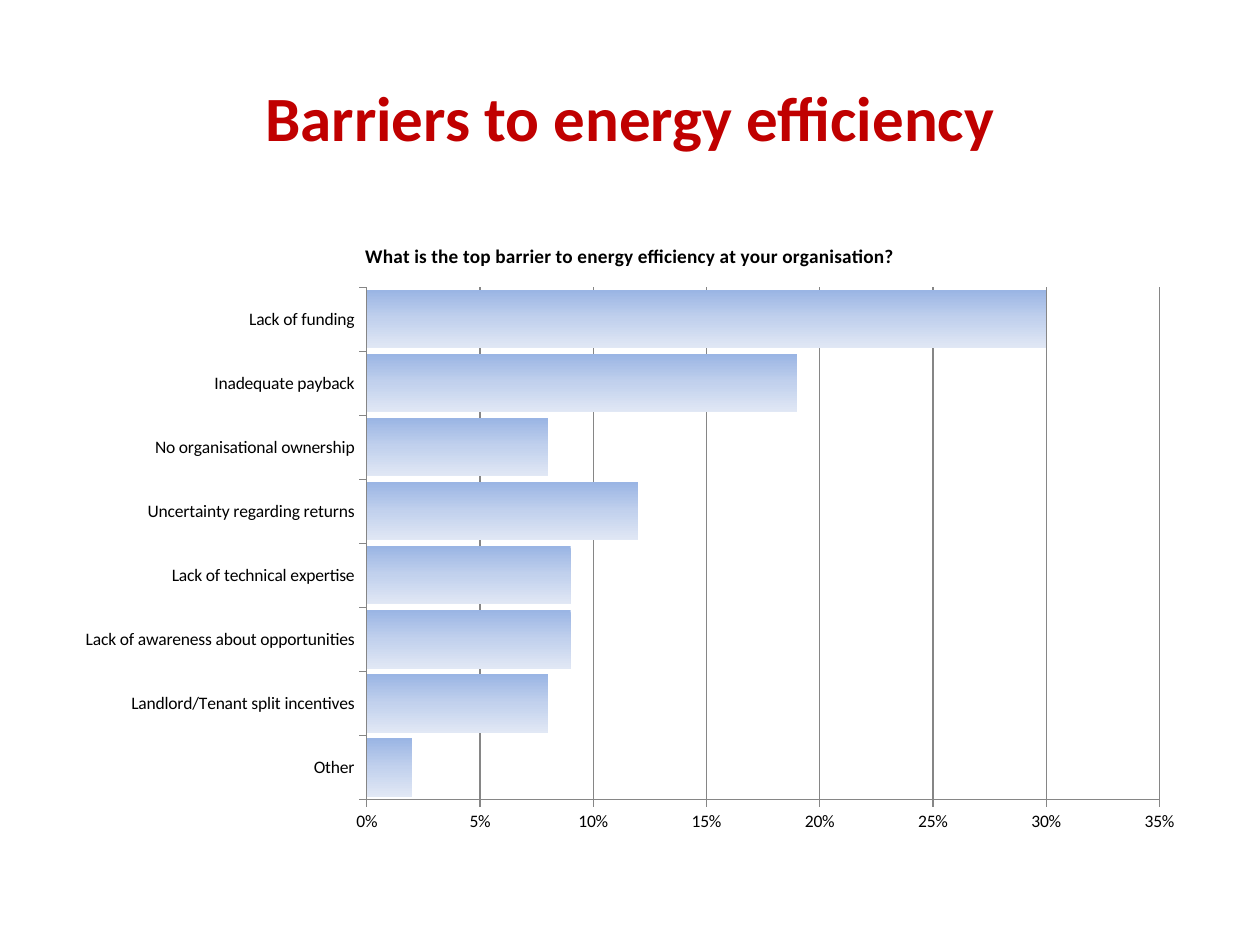
from copy import deepcopy

from pptx import Presentation
from pptx.chart.data import CategoryChartData
from pptx.dml.color import RGBColor
from pptx.enum.chart import XL_CHART_TYPE as ChartType, XL_TICK_MARK as TickMark
from pptx.enum.text import MSO_ANCHOR as Anchor, PP_ALIGN as Align
from pptx.util import Inches, Pt

FONT = "Calibri"
RED = RGBColor(0xC0, 0x00, 0x00)
BLACK = RGBColor(0x00, 0x00, 0x00)
GRAY = RGBColor(0x86, 0x86, 0x86)
BAR_STOPS = [
    (0, RGBColor(0x9A, 0xB5, 0xE4)),
    (0.5, RGBColor(0xC2, 0xD1, 0xED)),
    (1, RGBColor(0xE1, 0xE8, 0xF5)),
]
# Listed from the bottom bar to the top bar
BARRIERS = [
    ("Other", 0.02),
    ("Landlord/Tenant split incentives", 0.08),
    ("Lack of awareness about opportunities", 0.09),
    ("Lack of technical expertise", 0.09),
    ("Uncertainty regarding returns", 0.12),
    ("No organisational ownership", 0.08),
    ("Inadequate payback", 0.19),
    ("Lack of funding", 0.3),
]


def add_run(paragraph, text, size, color):
    run = paragraph.add_run()
    run.text = text
    run.font.name = FONT
    run.font.size = Pt(size)
    run.font.bold = True
    run.font.color.rgb = color


presentation = Presentation()
presentation.slide_width = Inches(10)
presentation.slide_height = Inches(7.5)
slide = presentation.slides.add_slide(presentation.slide_layouts[5])

# Title
title = slide.shapes.title
title.left, title.top = Inches(0.5), Inches(0.3)
title.width, title.height = Inches(9), Inches(1.25)
title.text_frame.vertical_anchor = Anchor.MIDDLE
paragraph = title.text_frame.paragraphs[0]
paragraph.alignment = Align.CENTER
add_run(paragraph, "Barriers to energy efficiency", 36, RED)

# Bar chart
chart_data = CategoryChartData(number_format="0%")
chart_data.categories = [name for name, share in BARRIERS]
chart_data.add_series("Series 1", [share for name, share in BARRIERS])
chart = slide.shapes.add_chart(
    ChartType.BAR_CLUSTERED,
    Inches(0.5), Inches(1.75), Inches(9), Inches(4.95), chart_data,
).chart
chart.font.name = FONT
chart.font.size = Pt(18)
chart.font.color.rgb = BLACK
chart.has_legend = False
chart.has_title = True
add_run(
    chart.chart_title.text_frame.paragraphs[0],
    "What is the top barrier to energy efficiency at your organisation?", 11, BLACK,
)
chart.chart_title.include_in_layout = False

# Axes and gridlines
for axis in (chart.category_axis, chart.value_axis):
    axis.major_tick_mark = TickMark.OUTSIDE
    axis.minor_tick_mark = TickMark.NONE
    axis.tick_labels.font.name = FONT
    axis.tick_labels.font.size = Pt(10)
    axis.tick_labels.font.color.rgb = BLACK
    axis.format.line.color.rgb = GRAY
    axis.format.line.width = Pt(0.75)
value_axis = chart.value_axis
value_axis.minimum_scale = 0
value_axis.maximum_scale = 0.35
value_axis.major_unit = 0.05
value_axis.tick_labels.number_format = "0%"
value_axis.tick_labels.number_format_is_linked = False
value_axis.has_major_gridlines = True
value_axis.major_gridlines.format.line.color.rgb = GRAY
value_axis.major_gridlines.format.line.width = Pt(0.75)

# Bars with a three-stop gradient running downwards
plot = chart.plots[0]
plot.gap_width = 10
plot.vary_by_categories = False
series = plot.series[0]
fill = series.format.fill
fill.gradient()
fill.gradient_angle = 270
stop_list = series._element.xpath(".//a:gsLst")[0]
stop_list.insert(1, deepcopy(stop_list[0]))
for stop, (position, color) in zip(fill.gradient_stops, BAR_STOPS):
    stop.position = position
    stop.color.rgb = color

presentation.save("out.pptx")
